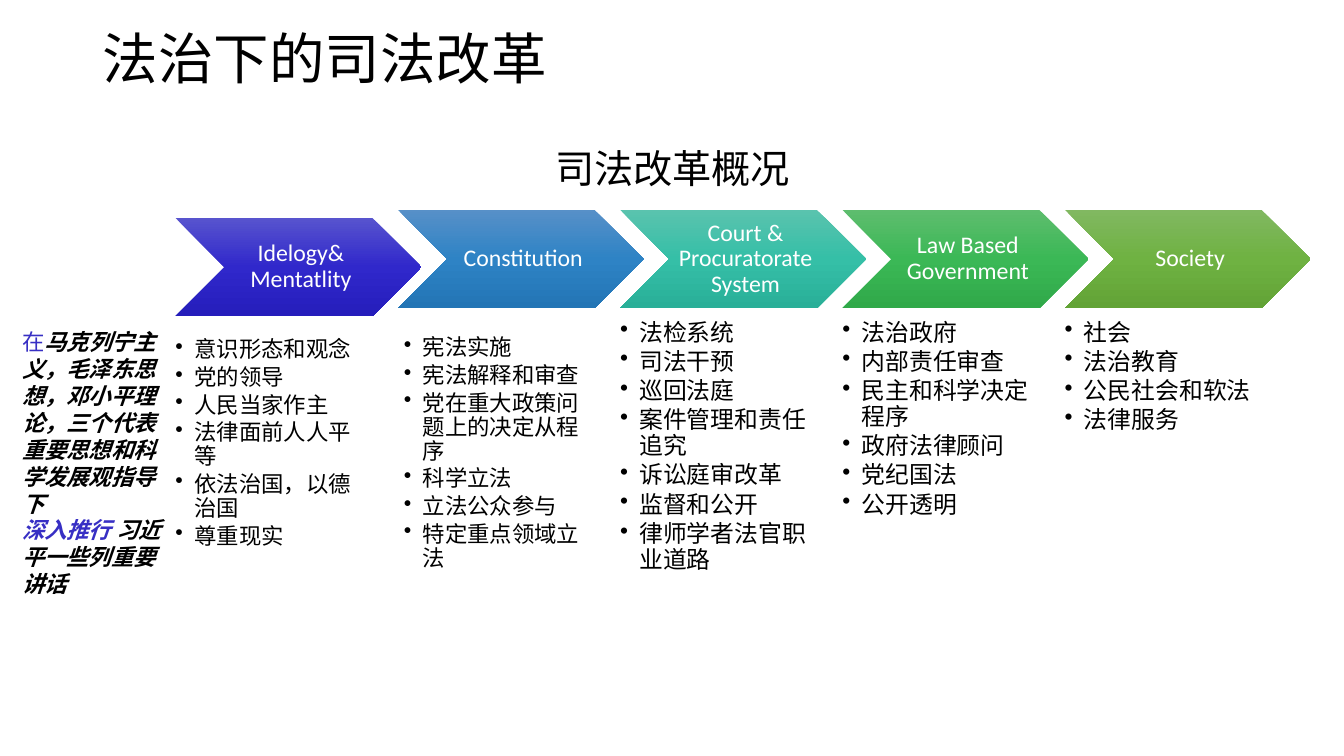
from copy import deepcopy

from lxml import etree
from pptx import Presentation
from pptx.dml.color import RGBColor
from pptx.enum.shapes import MSO_SHAPE
from pptx.enum.text import MSO_ANCHOR, PP_ALIGN
from pptx.oxml.ns import qn
from pptx.util import Inches, Pt

BLACK = RGBColor(0x00, 0x00, 0x00)
WHITE = RGBColor(0xFF, 0xFF, 0xFF)
INDIGO = RGBColor(0x37, 0x2F, 0xC4)
FONT = "Calibri"

FIRST_LEFT, STEP = 1.74, 2.205
CHEVRON_WIDTH, CHEVRON_HEIGHT = 2.44, 0.98
LIST_WIDTH, LIST_HEIGHT = 1.95, 2.8

# heading, gradient, chevron top, list offset from chevron, list top, list size, points
STAGES = [
    ("Idelogy& Mentatlity", ("5854CE", "3028CB", "251DBB"), 2.16, 0, 3.36, 16,
     ["意识形态和观念", "党的领导", "人民当家作主", "法律面前人人平等",
      "依法治国，以德治国", "尊重现实"]),
    ("Constitution", ("5790C8", "2E83C5", "2375B5"), 2.08, 0.06, 3.34, 16,
     ["宪法实施", "宪法解释和审查", "党在重大政策问题上的决定从程序", "科学立法",
      "立法公众参与", "特定重点领域立法"]),
    ("Court & Procuratorate System", ("5AC3AE", "35BFA7", "29AF98"), 2.08, 0, 3.18, 17,
     ["法检系统", "司法干预", "巡回法庭", "案件管理和责任追究", "诉讼庭审改革",
      "监督和公开", "律师学者法官职业道路"]),
    ("Law Based Government", ("5EBD6E", "3BB856", "30A949"), 2.08, 0, 3.18, 17,
     ["法治政府", "内部责任审查", "民主和科学决定程序", "政府法律顾问", "党纪国法",
      "公开透明"]),
    ("Society", ("81B861", "6FB242", "62A336"), 2.08, 0, 3.18, 17,
     ["社会", "法治教育", "公民社会和软法", "法律服务"]),
]

# each paragraph: text, colour, emphasised
GUIDANCE = [
    [("在", INDIGO, False),
     ("马克列宁主义，毛泽东思想，邓小平理论，三个代表重要思想和科学发展观指导下", BLACK, True)],
    [("深入推行 ", INDIGO, True), ("习近平一些列重要讲话", BLACK, True)],
]


def style(paragraph, size, color, align=PP_ALIGN.LEFT, line_spacing=0.9):
    paragraph.alignment = align
    paragraph.line_spacing = line_spacing
    paragraph.font.name = FONT
    paragraph.font.size = Pt(size)
    paragraph.font.color.rgb = color


def add_text_frame(left, top, width, height):
    box = slide.shapes.add_textbox(Inches(left), Inches(top), Inches(width), Inches(height))
    box.text_frame.word_wrap = True
    return box.text_frame


prs = Presentation()
prs.slide_width, prs.slide_height = Inches(13.33), Inches(7.5)
slide = prs.slides.add_slide(prs.slide_layouts[5])

title = slide.shapes.title
title.left, title.top = Inches(0.92), Inches(0.4)
title.width, title.height = Inches(11.5), Inches(0.43)
title.text_frame.text = "法治下的司法改革"
title.text_frame.vertical_anchor = MSO_ANCHOR.MIDDLE
style(title.text_frame.paragraphs[0], 39.6, BLACK)

subtitle = add_text_frame(0.92, 1.44, 11.5, 0.6)
subtitle.text = "司法改革概况"
style(subtitle.paragraphs[0], 28, BLACK, PP_ALIGN.CENTER)

for index, (heading, gradient, top, offset, list_top, size, points) in enumerate(STAGES):
    left = FIRST_LEFT + index * STEP
    chevron = slide.shapes.add_shape(
        MSO_SHAPE.CHEVRON, Inches(left), Inches(top),
        Inches(CHEVRON_WIDTH), Inches(CHEVRON_HEIGHT))
    chevron.shadow.inherit = False
    chevron.line.fill.background()
    chevron.fill.gradient()
    chevron.fill.gradient_angle = 270
    stop_list = next(chevron._element.spPr.iter(qn("a:gsLst")))
    stop_list.insert(1, deepcopy(stop_list[0]))
    for stop, position, color in zip(chevron.fill.gradient_stops, (0, 0.5, 1), gradient):
        stop.position = position
        stop.color.rgb = RGBColor.from_string(color)

    label = chevron.text_frame
    label.word_wrap = True
    label.vertical_anchor = MSO_ANCHOR.MIDDLE
    label.margin_left = Inches(0.07)
    label.margin_right = label.margin_top = label.margin_bottom = Inches(0.02)
    label.text = heading
    style(label.paragraphs[0], 17, WHITE, PP_ALIGN.CENTER)

    measures = add_text_frame(left + offset, list_top, LIST_WIDTH, LIST_HEIGHT)
    measures.margin_left = measures.margin_right = 0
    measures.margin_top = measures.margin_bottom = 0
    measures.text = "\n".join(points)
    for paragraph in measures.paragraphs:
        properties = paragraph._p.get_or_add_pPr()
        properties.set("marL", str(Inches(0.19)))
        properties.set("indent", str(-Inches(0.19)))
        etree.SubElement(properties, qn("a:buChar")).set("char", "•")
        paragraph.space_after = Pt(0.15 * size)
        style(paragraph, size, BLACK)

guidance = add_text_frame(0.12, 3.21, 1.62, 3.1)
guidance.add_paragraph()
for paragraph, parts in zip(guidance.paragraphs, GUIDANCE):
    style(paragraph, 16, BLACK, line_spacing=1.0)
    for text, color, emphasised in parts:
        run = paragraph.add_run()
        run.text = text
        run.font.color.rgb = color
        run.font.bold = run.font.italic = emphasised

prs.save("out.pptx")
